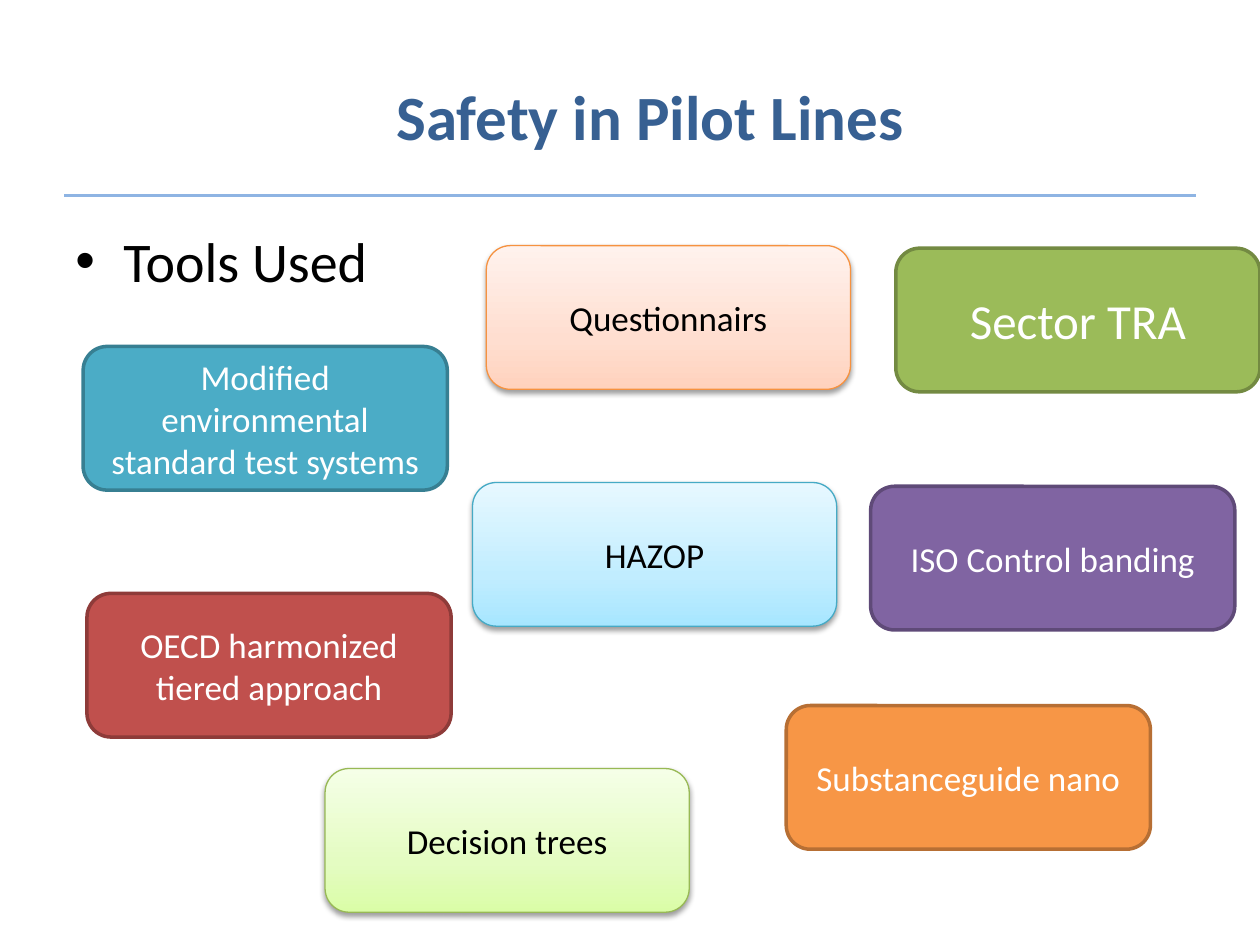
from lxml.etree import SubElement as Sub
from pptx import Presentation
from pptx.dml.color import RGBColor as Rgb
from pptx.enum.shapes import MSO_CONNECTOR as Conn, MSO_SHAPE as Kind
from pptx.enum.text import MSO_ANCHOR as Anchor, PP_ALIGN as Align
from pptx.oxml.ns import qn
from pptx.util import Inches, Pt

WIDE, HIGH = 10, 7.5
BOX = (2.89, 1.14)
HUES = {
    "title": "376092", "rule": "8EB4E3", "dark": "000000", "light": "FFFFFF",
    "teal": "4BACC6", "teal_edge": "377F92",
    "green": "9BBB59", "green_edge": "738A42",
    "plum": "8064A2", "plum_edge": "5F4A78",
    "red": "C0504D", "red_edge": "8E3B39",
    "gold": "F79646", "gold_edge": "B76F34",
    "lime_edge": "98B955", "sky_edge": "46AAC5", "peach_edge": "F69240",
}
FADES = {
    "lime": ("DAFDA7", "E4FCC2", "F5FFE7"),
    "sky": ("A7E6FF", "C1EDFF", "E7F8FF"),
    "peach": ("FFD2BD", "FFDED0", "FFF2ED"),
}
TOOLS = [
    ("Modified environmental standard test systems", "teal", 0.66, 2.75, 20),
    ("Sector TRA", "green", 7.11, 1.97, 28),
    ("ISO Control banding", "plum", 6.91, 3.86, 20),
    ("OECD harmonized tiered approach", "red", 0.69, 4.71, 20),
    ("Substanceguide nano", "gold", 6.24, 5.6, 20),
    ("Decision trees", "lime", 2.58, 6.1, 20),
    ("HAZOP", "sky", 3.75, 3.83, 20),
    ("Questionnairs", "peach", 3.86, 1.95, 20),
]


def hue(name):
    return Rgb.from_string(HUES[name])


def write(shape, text, size, color, align, anchor, bold=False):
    frame = shape.text_frame
    frame.word_wrap = True
    frame.vertical_anchor = anchor
    para = frame.paragraphs[0]
    para.text = text
    para.alignment = align
    font = para.font
    font.name, font.size, font.bold = "Calibri", Pt(size), bold
    font.color.rgb = hue(color)
    return para


def add_text(slide, area, *style):
    box = slide.shapes.add_textbox(*map(Inches, area))
    return write(box, *style)


def add_bullet(para, indent):
    props = para._p.get_or_add_pPr()
    props.set("marL", str(Inches(indent)))
    props.set("indent", str(-Inches(indent)))
    mark = props.makeelement(qn("a:buFont"), {"typeface": "Arial"})
    props.insert(0, mark)
    mark.addnext(props.makeelement(qn("a:buChar"), {"char": "•"}))


def add_rule(slide, left, top):
    ends = map(Inches, (left, top, WIDE - left, top))
    rule = slide.shapes.add_connector(Conn.STRAIGHT, *ends)
    rule.line.color.rgb = hue("rule")
    rule.line.width = Pt(2)
    Sub(rule._element.spPr, qn("a:effectLst"))


def fade(shape, tones):
    shape.fill.gradient()
    shape.fill.gradient_angle = 90
    stops = shape._element.spPr.find(qn("a:gradFill")).find(qn("a:gsLst"))
    for stop in list(stops):
        stops.remove(stop)
    for share, tone in zip((0, 35, 100), tones):
        stop = Sub(stops, qn("a:gs"), pos=str(share * 1000))
        Sub(stop, qn("a:srgbClr"), val=tone)


def add_shade(shape):
    effects = shape._element.spPr.find(qn("a:effectLst"))
    shade = Sub(effects, qn("a:outerShdw"), blurRad="40000", dist="20000",
                dir="5400000", rotWithShape="0")
    color = Sub(shade, qn("a:srgbClr"), val=HUES["dark"])
    Sub(color, qn("a:alpha"), val="38000")


def add_tool(slide, text, tint, left, top, size):
    area = map(Inches, (left, top, *BOX))
    box = slide.shapes.add_shape(Kind.ROUNDED_RECTANGLE, *area)
    box.shadow.inherit = False
    soft = tint in FADES
    if soft:
        fade(box, FADES[tint])
    else:
        box.fill.solid()
        box.fill.fore_color.rgb = hue(tint)
    box.line.color.rgb = hue(tint + "_edge")
    box.line.width = Pt(0.75 if soft else 2)
    if soft:
        add_shade(box)
    ink = "dark" if soft else "light"
    write(box, text, size, ink, Align.CENTER, Anchor.MIDDLE)


def main():
    deck = Presentation()
    deck.slide_width, deck.slide_height = Inches(WIDE), Inches(HIGH)
    slide = deck.slides.add_slide(deck.slide_layouts[6])
    add_rule(slide, 0.51, 1.55)
    add_text(slide, (2.09, 0.29, 6.14, 1.25), "Safety in Pilot Lines",
             36, "title", Align.CENTER, Anchor.MIDDLE, True)
    para = add_text(slide, (0.5, 1.75, 3.05, 0.68), "Tools Used",
                    32, "dark", Align.LEFT, Anchor.TOP)
    add_bullet(para, 0.38)
    for tool in TOOLS:
        add_tool(slide, *tool)
    deck.save("out.pptx")


if __name__ == "__main__":
    main()
